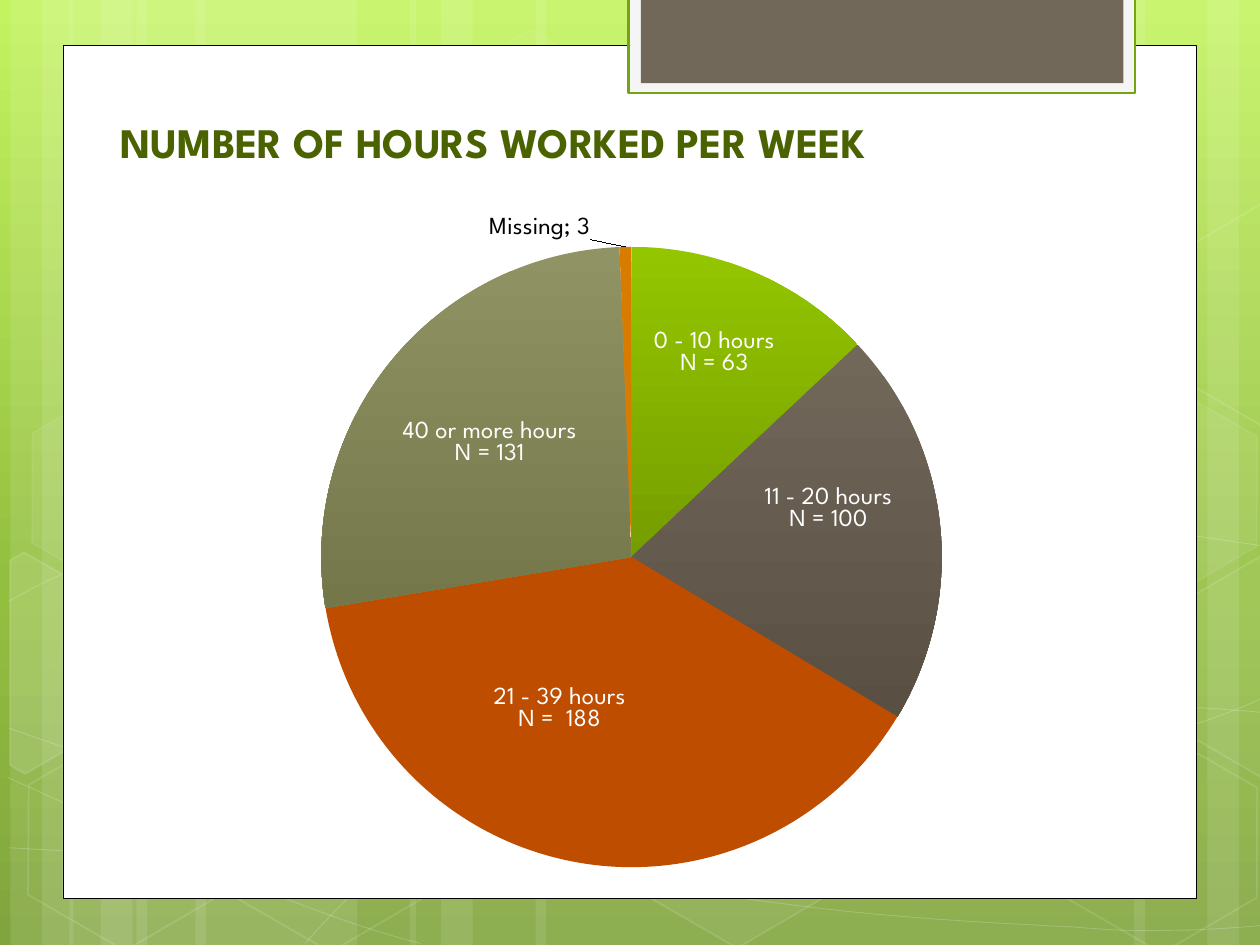
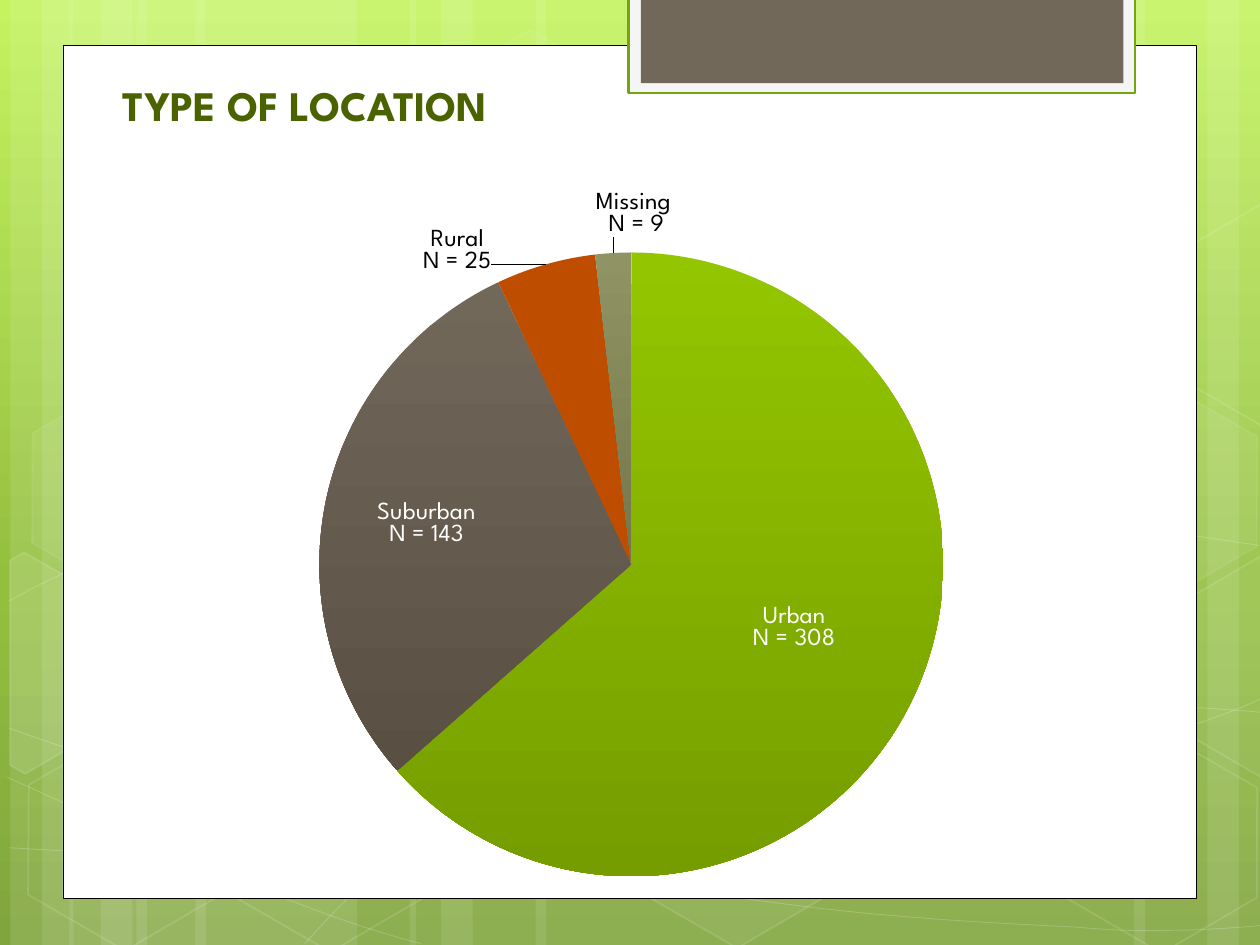
from copy import deepcopy
from math import cos, radians, sin

from pptx import Presentation
from pptx.chart.data import CategoryChartData
from pptx.dml.color import RGBColor as Rgb
from pptx.enum.chart import XL_CHART_TYPE as ChartType, XL_LABEL_POSITION as LabelSpot
from pptx.enum.shapes import MSO_SHAPE as Preset
from pptx.enum.text import MSO_ANCHOR as Anchor, PP_ALIGN as Align
from pptx.oxml import parse_xml
from pptx.oxml.ns import nsdecls, qn
from pptx.util import Cm, Pt

FONT = "League Spartan"
COLOURS = {
    "white": "FFFFFF", "black": "000000", "title": "4A6300",
    "tab": "71685A", "tab_frame": "F5F5F5", "tab_line": "74A510",
}
BACKGROUND = [(0, "C3F35F"), (0.62, "93BF3F"), (1, "81A53E")]
# Top and bottom colour of each slice
SLICES = [("94C600", "759D00"), ("71685A", "594F43"), ("BF4D00", "BF4D00"),
          ("909465", "747749"), ("D77C01", "D77C01")]
TITLE_FORMAT = {"size": Pt(24), "bold": True, "name": FONT}
LABEL_FORMAT = {"size": Pt(14), "bold": False, "name": FONT}

# Left and width of the pale full-height stripes
STRIPES = [(2.75, 4.45), (0.21, 1.27), (0.85, 2.12), (3.94, 4.45), (1.4, 1.27),
           (2.03, 2.12), (18.63, 4.45), (24.34, 1.27), (22.86, 2.12),
           (10.8, 7.83), (8.26, 1.27), (8.89, 2.12)]

# Each curve is a start point followed by groups of two handles and an end
CURVES = [
    [(0.18, 17.09), (1.55, 17.17), (2.92, 17.25), (4.83, 17.22),
     (6.73, 17.2), (9.09, 17.15), (11.63, 16.89),
     (14.17, 16.64), (17.78, 16.15), (20.12, 15.67),
     (22.43, 15.19), (24.82, 14.43), (25.58, 14)],
    [(0.18, 12.12), (0.91, 11.71), (1.65, 11.33), (3.07, 10.95),
     (4.52, 10.57), (6.58, 10.01), (8.81, 9.83),
     (11.07, 9.65), (13.82, 9.63), (16.61, 9.83),
     (19.41, 10.03), (24.05, 10.82), (25.58, 11.02)],
    [(0.15, 15.67), (3.23, 17.07), (6.27, 18.47), (8.48, 19.02)],
    [(0.18, 14.68), (0.97, 14.96), (1.78, 15.24), (3.25, 15.65),
     (4.72, 16.03), (6.93, 16.66), (9.07, 17.09),
     (11.18, 17.53), (13.84, 17.98), (15.95, 18.24),
     (18.06, 18.52), (20.32, 18.62), (21.67, 18.69),
     (22.99, 18.8), (23.34, 18.75), (24, 18.75),
     (24.66, 18.72), (25.12, 18.69), (25.58, 18.64)],
    [(6.15, 19.02), (6.6, 18.52), (7.06, 18.01), (7.67, 17.55),
     (8.28, 17.09), (9.14, 16.59), (9.86, 16.23),
     (10.57, 15.88), (11, 15.72), (11.94, 15.47),
     (12.85, 15.21), (14.55, 14.86), (15.44, 14.68),
     (16.36, 14.5), (16.48, 14.5), (17.27, 14.45),
     (18.06, 14.38), (19.3, 14.3), (20.17, 14.27),
     (21.06, 14.25), (22.5, 14.27), (22.5, 14.27),
     (22.5, 14.27), (24.21, 14.27), (24.21, 14.27),
     (24.66, 14.3), (25.1, 14.33), (25.32, 14.35),
     (25.55, 14.38), (25.48, 14.35), (25.55, 14.38)],
]

# Left, top, fill opacity and line opacity (percent)
HEXAGONS = [(8.48, 0.91, 4, 8), (12.62, 14.96, 6, 12), (0.28, 15.01, 0, 12),
            (0.36, 7.92, 7, 8), (4.42, 15.04, 0, 12), (19.13, 11.51, 10, 12),
            (21.18, 15.06, 0, 12), (21.18, 7.98, 7, 8)]
TILT = 30
LEFT_CUT = [(0.2, 11.3), (0.48, 11.13), (2.44, 12.24), (2.41, 14.48),
            (0.51, 15.6), (0.2, 15.42)]
RIGHT_CUT = [(23.52, 12.32), (25.43, 11.2), (25.63, 11.33), (25.63, 15.57),
             (25.45, 15.67), (23.52, 14.55)]
UPPER_CUT = [(x, y - 7.09) for x, y in RIGHT_CUT]
# Corners as seen, centre of the tilted frame, fill opacity
CUT_HEXAGONS = [(LEFT_CUT, (0.91, 13.59), 10), (RIGHT_CUT, (25.02, 13.21), 4),
                (UPPER_CUT, (25.02, 6.12), 0)]

# Left, top, width, height, fill, line, line width
PANELS = [
    (1.27, 0.91, 22.86, 17.2, "white", "black", 0.5),
    (12.67, -0.05, 10.21, 1.93, "tab_frame", "tab_line", 1.25),
    (12.92, -0.05, 9.73, 1.73, "tab", None, 0),
]

# A slice is: category, value, label text (None shows category and value),
# whether the label is outside, and its shift as a share of the chart
PAGES = [
    {"title": "NUMBER OF HOURS WORKED PER WEEK",
     "title_at": (1.69, 1.7, 16.51, 1.8),
     "chart_at": (1.7, 4.02, 21.59, 15.44),
     "plot": (0.206, 0.062, 0.61, 0.81),
     "slices": [
         ("0 - 10 hours", 63, "0 - 10 hours\nN = 63", False, (0.02, -0.08)),
         ("11 - 20 hours", 100, "11 - 20 hours\nN = 100", False, (0.04, -0.04)),
         ("21 - 39 hours", 188, "21 - 39 hours\nN =  188", False, (-0.04, 0)),
         ("40 or more hours", 131, "40 or more hours\nN = 131", False, (-0.02, -0.02)),
         ("Missing", 3, None, True, (-0.08, 0))]},
    {"title": "TYPE OF LOCATION",
     "title_at": (1.49, 1.05, 9.32, 1.7),
     "chart_at": (2.31, 2.96, 20.96, 16.94),
     "plot": (0.197, 0.114, 0.6, 0.766),
     "slices": [
         ("Urban", 308, "Urban\nN = 308", False, (0.02, 0)),
         ("Suburban", 143, "Suburban\nN = 143", False, (-0.05, -0.01)),
         ("Rural", 25, "Rural\nN = 25", True, (-0.05, 0.02)),
         ("Missing", 9, "Missing\n N = 9", True, (0.02, -0.01))]},
]


def paint(shape, fill, line, width=1, fill_opacity=100, line_opacity=100):
    """Fill and outline a shape; a colour of None or an opacity of 0 means none."""
    shape.shadow.inherit = False
    shape.line.width = Pt(width)
    for part, colour, opacity in ((shape.fill, fill, fill_opacity),
                                  (shape.line.fill, line, line_opacity)):
        if colour is None or opacity == 0:
            part.background()
            continue
        part.solid()
        part.fore_color.rgb = Rgb.from_string(COLOURS[colour])
        if opacity < 100:
            tone = part._xPr.find(qn("a:solidFill"))[0]
            tone.append(parse_xml(f'<a:alpha {nsdecls("a")} val="{opacity * 1000}"/>'))


def manual_layout(settings):
    """Make a chart layout element from (tag, value) pairs."""
    tags = "".join(f'<c:{tag} val="{value}"/>' for tag, value in settings)
    return parse_xml(f'<c:layout {nsdecls("c")}><c:manualLayout>{tags}'
                     "</c:manualLayout></c:layout>")


deck = Presentation()
deck.slide_width, deck.slide_height = Cm(25.4), Cm(19.05)

for content in PAGES:
    page = deck.slides.add_slide(deck.slide_layouts[6])
    shapes = page.shapes

    # Background gradient
    backdrop = page.background.fill
    backdrop.gradient()
    backdrop.gradient_angle = 270
    stop_list = page._element.xpath(".//p:bg//a:gsLst")[0]
    stop_list.insert(1, deepcopy(stop_list[0]))
    for stop, (position, colour) in zip(backdrop.gradient_stops, BACKGROUND):
        stop.position = position
        stop.color.rgb = Rgb.from_string(colour)

    # Stripes, curves and hexagons
    for left, width in STRIPES:
        stripe = shapes.add_shape(Preset.RECTANGLE, Cm(left), 0, Cm(width), deck.slide_height)
        paint(stripe, "white", None, fill_opacity=10)

    for curve in CURVES:
        start, *rest = [(Cm(x), Cm(y)) for x, y in curve]
        builder = shapes.build_freeform(*start)
        builder.add_line_segments(rest, close=False)
        wave = builder.convert_to_shape()
        # Turn every three straight steps into one Bézier segment
        steps = wave._element.xpath(".//a:lnTo")
        for first in range(0, len(steps), 3):
            bezier = parse_xml(f'<a:cubicBezTo {nsdecls("a")}/>')
            steps[first].addprevious(bezier)
            for step in steps[first:first + 3]:
                bezier.append(step[0])
                step.getparent().remove(step)
        paint(wave, None, "white", 0.5, line_opacity=20)

    for left, top, fill_opacity, line_opacity in HEXAGONS:
        hexagon = shapes.add_shape(Preset.HEXAGON, Cm(left), Cm(top), Cm(4.45), Cm(3.85))
        hexagon.adjustments[0] = 0.285
        hexagon.rotation = TILT
        paint(hexagon, "white", "white", 1, fill_opacity, line_opacity)

    cosine, sine = cos(radians(TILT)), sin(radians(TILT))
    for corners, (middle_x, middle_y), fill_opacity in CUT_HEXAGONS:
        # Turn the corners back, so that the tilt brings them into place
        start, *rest = [(Cm(middle_x + (x - middle_x) * cosine + (y - middle_y) * sine),
                         Cm(middle_y - (x - middle_x) * sine + (y - middle_y) * cosine))
                        for x, y in corners]
        builder = shapes.build_freeform(*start)
        builder.add_line_segments(rest, close=True)
        cut_hexagon = builder.convert_to_shape()
        cut_hexagon.rotation = TILT
        paint(cut_hexagon, "white", "white", 1, fill_opacity, 12)

    # White card and the tab at its top
    for left, top, width, height, fill, line, line_width in PANELS:
        panel = shapes.add_shape(Preset.RECTANGLE, Cm(left), Cm(top), Cm(width), Cm(height))
        paint(panel, fill, line, line_width)

    # Title
    box = shapes.add_textbox(*map(Cm, content["title_at"]))
    box.text_frame.word_wrap = True
    box.text_frame.vertical_anchor = Anchor.BOTTOM
    para = box.text_frame.paragraphs[0]
    para.alignment = Align.CENTER
    span = para.add_run()
    span.text = content["title"]
    span.font.color.rgb = Rgb.from_string(COLOURS["title"])
    for name, value in TITLE_FORMAT.items():
        setattr(span.font, name, value)

    # Pie chart
    data = CategoryChartData()
    data.categories = [item[0] for item in content["slices"]]
    data.add_series("Series 1", [item[1] for item in content["slices"]])
    chart = shapes.add_chart(ChartType.PIE, *map(Cm, content["chart_at"]), data).chart
    chart.has_legend = False
    chart.has_title = False
    chart.font.name, chart.font.size = FONT, Pt(10)
    chart.font.color.rgb = Rgb.from_string(COLOURS["black"])

    plot_area = chart._chartSpace.xpath(".//c:plotArea")[0]
    for old_layout in plot_area.findall(qn("c:layout")):
        plot_area.remove(old_layout)
    plot_area.insert(0, manual_layout(
        [("layoutTarget", "inner"), ("xMode", "edge"), ("yMode", "edge"),
         *zip("xywh", content["plot"])]))

    plot = chart.plots[0]
    plot.vary_by_categories = True
    series = plot.series[0]
    series.data_labels.show_value = True
    series.data_labels.show_category_name = True

    for index, (category, value, text, outside, shift) in enumerate(content["slices"]):
        point = series.points[index]
        top_colour, bottom_colour = SLICES[index]
        fill = point.format.fill
        if top_colour == bottom_colour:
            fill.solid()
            fill.fore_color.rgb = Rgb.from_string(top_colour)
        else:
            fill.gradient()
            fill.gradient_angle = 270
            for stop, colour in zip(fill.gradient_stops, SLICES[index]):
                stop.color.rgb = Rgb.from_string(colour)
        point.format.line.fill.background()

        label = point.data_label
        if text:
            label.text_frame.text = text
            fonts = [run.font for line in label.text_frame.paragraphs for run in line.runs]
        else:
            fonts = [label.font]
        for font in fonts:
            font.color.rgb = Rgb.from_string(COLOURS["black" if outside else "white"])
            for name, setting in LABEL_FORMAT.items():
                setattr(font, name, setting)
        label.position = LabelSpot.OUTSIDE_END if outside else LabelSpot.CENTER

        label_xml = series._element.xpath(f'.//c:dLbl[c:idx/@val="{index}"]')[0]
        label_xml.insert(1, manual_layout(zip("xy", shift)))
        label_xml.find(qn("c:showCatName")).set("val", "1")
        label_xml.append(parse_xml(f'<c:separator {nsdecls("c")}>; </c:separator>'))

deck.save("out.pptx")
